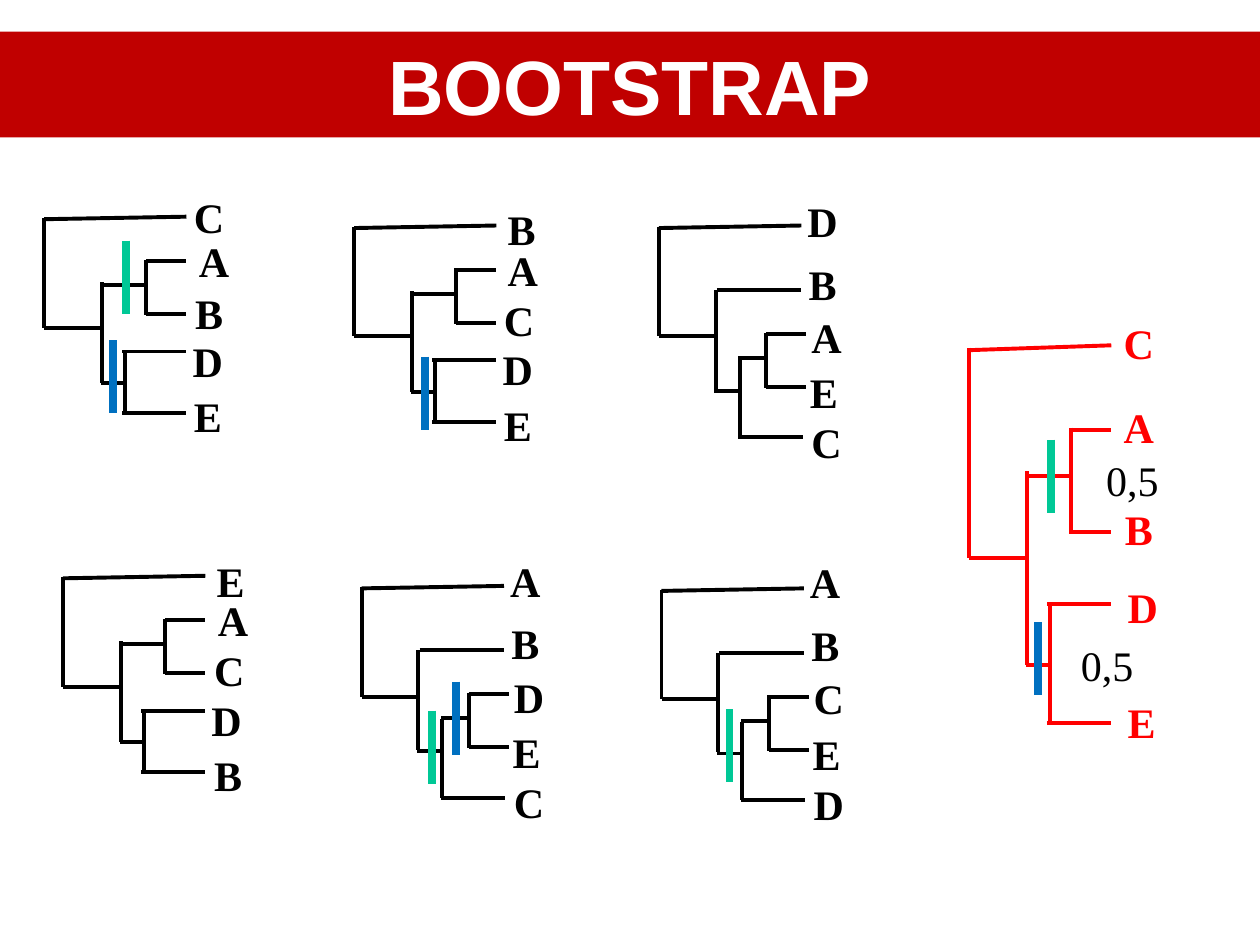
import pptx
import pptx.dml.color
import pptx.enum.shapes
import pptx.enum.text
import pptx.oxml
import pptx.oxml.ns
import pptx.util
from pptx.util import Inches

BLACK, RED, WHITE = "000000", "FF0000", "FFFFFF"
GREEN, BLUE = "00C896", "0070C0"
SERIF = "Times New Roman"
RED_STRETCH = 1.92

# Branches as (x1, y1, x2, y2), in inches from the top of the root line.
ROOT = [(0, 0, 0, 0.87), (0, 0.01, 1.13, -0.01), (0, 0.87, 0.46, 0.87)]
TWO_PAIRS = ROOT + [
    (0.46, 0.51, 0.46, 1.31),
    (0.81, 0.33, 0.81, 0.77), (0.81, 0.53, 0.46, 0.53),
    (0.81, 0.34, 1.13, 0.34), (0.81, 0.76, 1.13, 0.76),
    (0.64, 1.31, 0.45, 1.31), (0.64, 1.06, 0.64, 1.56),
    (0.62, 1.06, 1.13, 1.06), (0.62, 1.55, 1.13, 1.55),
]
LADDER = ROOT + [
    (0.45, 0.5, 0.45, 1.29), (0.46, 0.5, 1.13, 0.5),
    (0.85, 0.84, 0.85, 1.28), (0.85, 1.04, 0.63, 1.04),
    (0.85, 0.85, 1.17, 0.85), (0.85, 1.27, 1.17, 1.27),
    (0.63, 1.3, 0.44, 1.3), (0.64, 1.05, 0.64, 1.67),
    (0.63, 1.67, 1.14, 1.67),
]

# Root position, branches, and leaf labels as (letter, left, top).
REPLICATES = [
    (0.35, 1.73, TWO_PAIRS, [("C", 1.44, 1.47), ("A", 1.48, 1.82), ("B", 1.45, 2.23),
                             ("D", 1.43, 2.61), ("E", 1.44, 3.05)]),
    (2.81, 1.8, TWO_PAIRS, [("B", 3.93, 1.57), ("A", 3.93, 1.89), ("C", 3.9, 2.29),
                            ("D", 3.89, 2.68), ("E", 3.9, 3.12)]),
    (5.23, 1.8, LADDER, [("D", 6.31, 1.5), ("B", 6.32, 2), ("A", 6.34, 2.42),
                         ("E", 6.33, 2.86), ("C", 6.34, 3.26)]),
    (0.5, 4.58, TWO_PAIRS, [("E", 1.62, 4.36), ("A", 1.63, 4.67), ("C", 1.6, 5.07),
                            ("D", 1.58, 5.46), ("B", 1.6, 5.9)]),
    (2.87, 4.66, LADDER, [("A", 3.95, 4.36), ("B", 3.96, 4.85), ("D", 3.98, 5.28),
                          ("E", 3.97, 5.72), ("C", 3.98, 6.11)]),
    (5.25, 4.68, LADDER, [("A", 6.33, 4.37), ("B", 6.34, 4.87), ("C", 6.36, 5.29),
                          ("E", 6.35, 5.73), ("D", 6.36, 6.13)]),
]
CONSENSUS = (7.69, 2.76, TWO_PAIRS, [("C", 8.82, 2.47), ("A", 8.82, 3.14), ("B", 8.83, 3.95),
                                     ("D", 8.85, 4.57), ("E", 8.85, 5.48)])

# Clade marks as (x, top): green for A+B, blue for D+E.
CLADE_MARKS = {
    GREEN: [(8.34, 3.49), (1, 1.91), (3.43, 5.64), (5.79, 5.63)],
    BLUE: [(8.24, 4.94), (0.9, 2.7), (3.37, 2.83), (3.62, 5.41)],
}
SUPPORT_VALUES = [(8.68, 3.56), (8.48, 5.03)]


def rgb(value):
    return pptx.dml.color.RGBColor.from_string(value)


def add_line(shapes, x1, y1, x2, y2, color, width=2.25):
    line = shapes.add_connector(pptx.enum.shapes.MSO_CONNECTOR.STRAIGHT,
                                Inches(x1), Inches(y1), Inches(x2), Inches(y2))
    line.line.color.rgb = rgb(color)
    line.line.width = pptx.util.Pt(width)
    props = line._element.spPr
    props.append(pptx.oxml.parse_xml(
        f'<a:effectLst {pptx.oxml.ns.nsdecls("a")}/>'))


def add_run(p, text, size, font, color, bold):
    r = p.add_run()
    r.text = text
    r.font.size = pptx.util.Pt(size)
    r.font.name = font
    r.font.bold = bold
    r.font.color.rgb = rgb(color)


def add_label(shapes, text, left, top, width, height, color, bold):
    box = shapes.add_textbox(Inches(left), Inches(top), Inches(width), Inches(height))
    tf = box.text_frame
    tf.word_wrap = True
    add_run(tf.paragraphs[0], text, 24, SERIF, color, bold)


def add_tree(shapes, tree, color, stretch=1):
    """Draw the branches, stretched vertically, and the leaf labels."""
    x, y, branches, leaves = tree
    for x1, y1, x2, y2 in branches:
        add_line(shapes, x + x1, y + y1 * stretch, x + x2, y + y2 * stretch, color)
    for letter, left, top in leaves:
        add_label(shapes, letter, left, top, 0.45, 0.5 * stretch, color, True)


def set_title(slide, text):
    title = slide.shapes.title
    title.left, title.top = Inches(0), Inches(0.25)
    title.width, title.height = Inches(10), Inches(0.84)
    title.fill.solid()
    title.fill.fore_color.rgb = rgb("C00000")
    tf = title.text_frame
    tf.auto_size = pptx.enum.text.MSO_AUTO_SIZE.NONE
    p = tf.paragraphs[0]
    p.alignment = pptx.enum.text.PP_ALIGN.CENTER
    add_run(p, text, 44, "Arial", WHITE, True)


def main():
    prs = pptx.Presentation()
    prs.slide_width, prs.slide_height = Inches(10), Inches(7.5)
    s = prs.slides.add_slide(prs.slide_layouts[5])
    set_title(s, "BOOTSTRAP")
    for tree in REPLICATES:
        add_tree(s.shapes, tree, BLACK)
    add_tree(s.shapes.add_group_shape().shapes, CONSENSUS, RED, RED_STRETCH)
    for left, top in SUPPORT_VALUES:
        add_label(s.shapes, "0,5", left, top, 0.62, 0.5, BLACK, False)
    for color, marks in CLADE_MARKS.items():
        for x, top in marks:
            add_line(s.shapes, x, top, x, top + 0.58, color, 4.5)
    prs.save("out.pptx")


if __name__ == "__main__":
    main()
